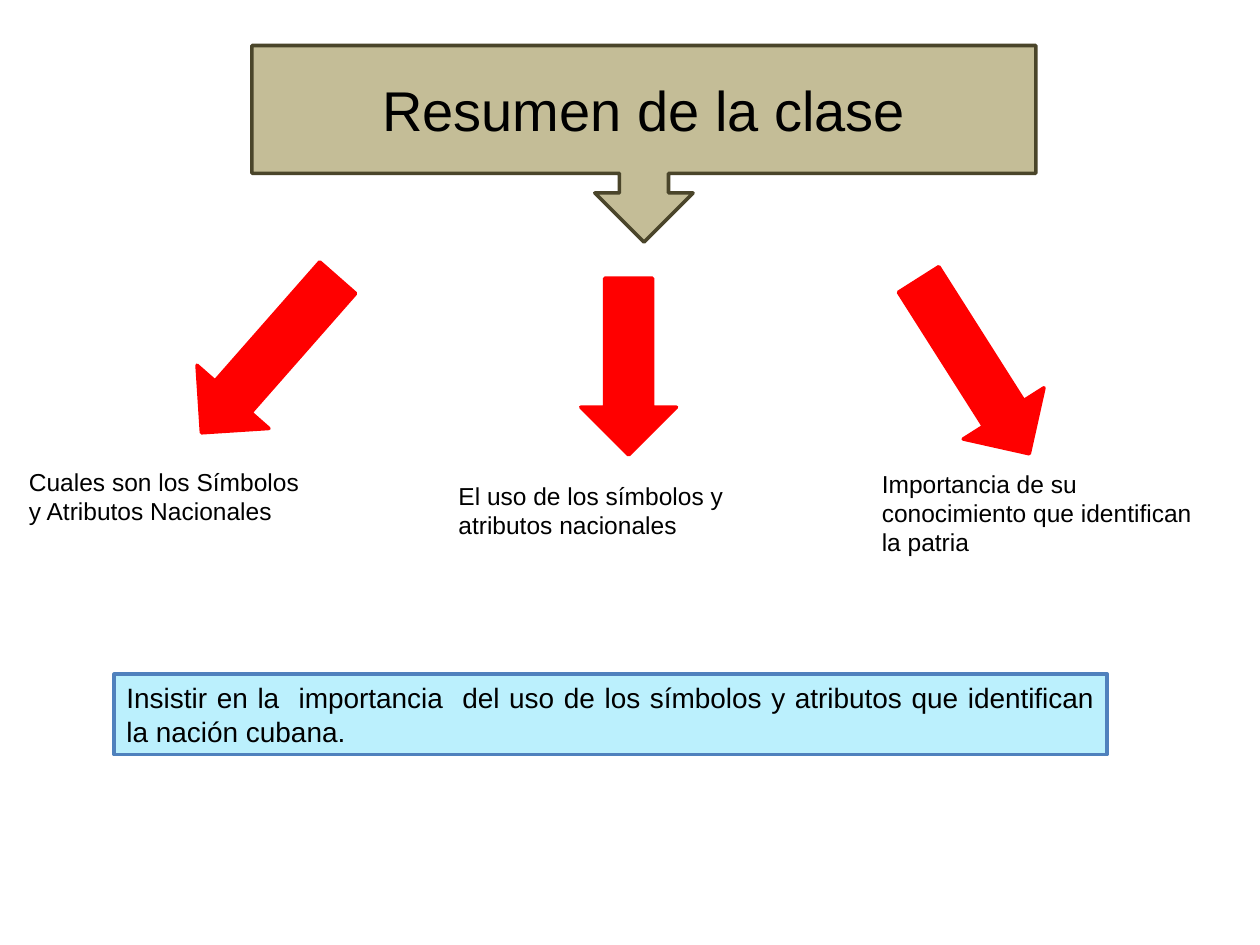
from typing import NamedTuple

from pptx import Presentation
from pptx.dml.color import RGBColor
from pptx.enum.shapes import MSO_SHAPE
from pptx.enum.text import MSO_ANCHOR, PP_ALIGN
from pptx.util import Pt

COLORS = {
    "tan": "C4BD97",
    "olive": "4A452A",
    "red": "FF0000",
    "sky": "BBF0FD",
    "blue": "4F81BD",
    "black": "000000",
}


class Box(NamedTuple):
    left: float
    top: float
    width: float
    height: float


class Branch(NamedTuple):
    """An arrow from the title and the topic it points to."""
    arrow: Box
    rotation: float
    label: Box
    text: str


BRANCHES = [
    Branch(Box(126.7, 144, 54.7, 118), 41.3, Box(9.4, 263.3, 170, 39.4),
           "Cuales son los Símbolos y Atributos Nacionales"),
    Branch(Box(331.9, 159, 54.7, 101), 0, Box(254.9, 271.3, 208.8, 39.4),
           "El uso de los símbolos y atributos nacionales"),
    Branch(Box(529.2, 150.5, 54.7, 118), 327.6, Box(496.8, 264.2, 204.5, 58.3),
           "Importancia de su conocimiento que identifican la patria"),
]


def lengths(box: Box) -> list:
    return [Pt(value) for value in box]


def rgb(name: str) -> RGBColor:
    return RGBColor.from_string(COLORS[name])


def write(sp, text: str, size: float, align=PP_ALIGN.LEFT, anchor=MSO_ANCHOR.MIDDLE) -> None:
    tf = sp.text_frame
    tf.word_wrap = True
    tf.vertical_anchor = anchor
    p = tf.paragraphs[0]
    p.text = text
    p.alignment = align
    p.font.name = "Arial"
    p.font.size = Pt(size)
    p.font.color.rgb = rgb("black")


def add_shape(s, kind, box: Box, fill: str, line: str, rotation: float = 0):
    sp = s.shapes.add_shape(kind, *lengths(box))
    sp.shadow.inherit = False
    sp.rotation = rotation
    sp.fill.solid()
    sp.fill.fore_color.rgb = rgb(fill)
    sp.line.color.rgb = rgb(line)
    sp.line.width = Pt(2)
    return sp


def add_branch(s, branch: Branch) -> None:
    add_shape(s, MSO_SHAPE.DOWN_ARROW, branch.arrow, "red", "red", branch.rotation)
    label = s.shapes.add_textbox(*lengths(branch.label))
    write(label, branch.text, 14, anchor=MSO_ANCHOR.TOP)


def main() -> None:
    prs = Presentation()
    prs.slide_width, prs.slide_height = Pt(720), Pt(540)
    s = prs.slides.add_slide(prs.slide_layouts[6])

    title = add_shape(s, MSO_SHAPE.DOWN_ARROW_CALLOUT, Box(144, 26, 448, 112.4),
                      "tan", "olive")
    write(title, "Resumen de la clase", 32, PP_ALIGN.CENTER)

    for branch in BRANCHES:
        add_branch(s, branch)

    closing = add_shape(s, MSO_SHAPE.RECTANGLE, Box(65.2, 385.2, 567.4, 46), "sky", "blue")
    write(closing, "Insistir en la  importancia  del uso de los símbolos y atributos "
          "que identifican la nación cubana.", 16, PP_ALIGN.JUSTIFY)

    prs.save("out.pptx")


if __name__ == "__main__":
    main()
